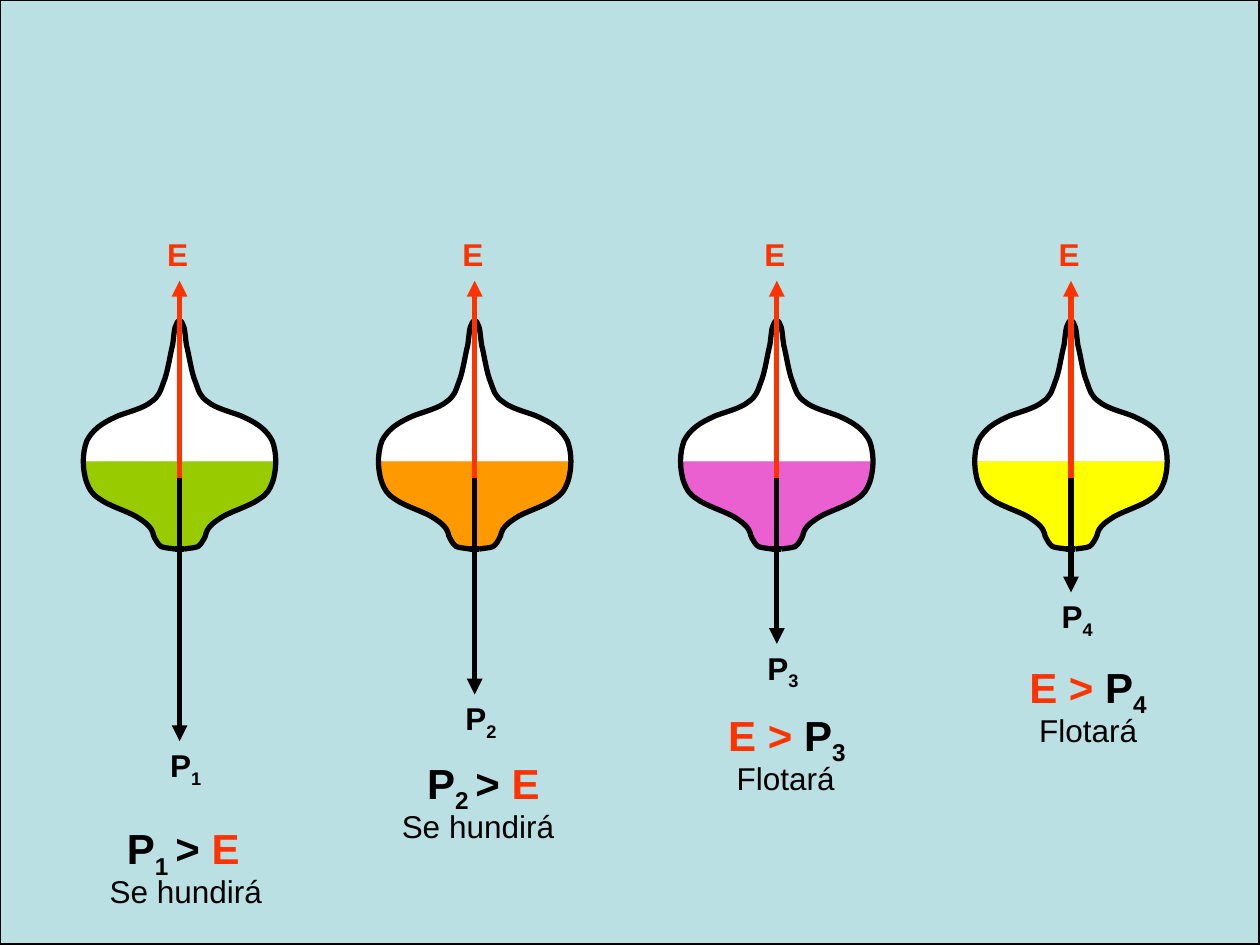
from dataclasses import dataclass

from lxml.etree import SubElement
from pptx import Presentation
from pptx.dml.color import RGBColor
from pptx.enum.shapes import MSO_CONNECTOR as Connector, MSO_SHAPE as Shape
from pptx.enum.text import MSO_AUTO_SIZE as AutoSize
from pptx.oxml.ns import qn
from pptx.util import Cm, Pt


@dataclass(frozen=True)
class Theme:
    font: str = "Arial"
    backdrop: RGBColor = RGBColor(0x5F, 0x5F, 0x5F)
    water: RGBColor = RGBColor(0xBB, 0xE0, 0xE3)
    air: RGBColor = RGBColor(0xFF, 0xFF, 0xFF)
    ink: RGBColor = RGBColor(0, 0, 0)
    thrust: RGBColor = RGBColor(0xFF, 0x33, 0)
    green: RGBColor = RGBColor(0x99, 0xCC, 0)
    orange: RGBColor = RGBColor(0xFF, 0x99, 0)
    pink: RGBColor = RGBColor(0xEA, 0x60, 0xD0)
    yellow: RGBColor = RGBColor(0xFF, 0xFF, 0)
    label_size: Pt = Pt(18)
    verdict_size: Pt = Pt(24)
    frame_line: Pt = Pt(1.75)
    thin_line: Pt = Pt(2.25)
    thick_line: Pt = Pt(3)


theme = Theme()


def add_text(shapes, left, top, width, height, runs, size, bold=True):
    """Add a text box; runs are (text, colour, is_subscript) tuples."""
    box = shapes.add_textbox(Cm(left), Cm(top), Cm(width), Cm(height))
    frame = box.text_frame
    frame.word_wrap = True
    frame.auto_size = AutoSize.SHAPE_TO_FIT_TEXT
    for text, colour, is_subscript in runs:
        run = frame.paragraphs[0].add_run()
        run.text = text
        run.font.name = theme.font
        run.font.size = size
        run.font.bold = bold
        run.font.color.rgb = colour
        if is_subscript:
            run.font._element.set("baseline", "-25000")


def add_freeform(shapes, points, fill=None):
    """Add a filled polygon, or an open black stroke when there is no fill."""
    corners = [(Cm(x), Cm(y)) for x, y in points]
    builder = shapes.build_freeform(*corners[0])
    builder.add_line_segments(corners[1:], close=fill is not None)
    shape = builder.convert_to_shape()
    shape.shadow.inherit = False
    if fill is None:
        shape.fill.background()
        shape.line.color.rgb = theme.ink
        shape.line.width = theme.thick_line
    else:
        shape.fill.solid()
        shape.fill.fore_color.rgb = fill
        shape.line.fill.background()
    return shape


presentation = Presentation()
presentation.slide_width = Cm(25.4)
presentation.slide_height = Cm(19.05)
slide = presentation.slides.add_slide(presentation.slide_layouts[6])
slide.background.fill.solid()
slide.background.fill.fore_color.rgb = theme.backdrop

water = slide.shapes.add_shape(
    Shape.RECTANGLE, 0, 0, presentation.slide_width, presentation.slide_height)
water.shadow.inherit = False
water.fill.solid()
water.fill.fore_color.rgb = theme.water
water.line.color.rgb = theme.ink
water.line.width = theme.frame_line

# Half of the diver, from tip to foot: Bézier curves in cm,
# as (distance from the axis, height on the slide).
TIP = (-0.06, 6.5)
CURVES = [
    ((-0.01, 6.48), (0.04, 6.45), (0.06, 6.53)),
    ((0.11, 6.6), (0.11, 6.76), (0.14, 6.96)),
    ((0.19, 7.14), (0.24, 7.52), (0.32, 7.7)),
    ((0.39, 7.9), (0.42, 8), (0.57, 8.1)),
    ((0.72, 8.23), (1.05, 8.31), (1.23, 8.38)),
    ((1.41, 8.46), (1.54, 8.53), (1.64, 8.61)),
    ((1.74, 8.69), (1.82, 8.79), (1.87, 8.89)),
    ((1.92, 9.02), (1.94, 9.17), (1.94, 9.3)),
    ((1.94, 9.42), (1.92, 9.6), (1.87, 9.73)),
    ((1.82, 9.86), (1.77, 9.96), (1.61, 10.06)),
    ((1.44, 10.19), (1.05, 10.31), (0.88, 10.41)),
    ((0.7, 10.52), (0.62, 10.59), (0.57, 10.67)),
    ((0.52, 10.72), (0.55, 10.77), (0.5, 10.85)),
    ((0.47, 10.9), (0.44, 10.97), (0.37, 11.02)),
    ((0.29, 11.05), (0.19, 11.05), (0.09, 11.07)),
]
NODES = [TIP] + [curve[-1] for curve in CURVES]
BELLY = 8  # index of the widest node, where the liquid starts
CENTRE = 9.63  # height at which both forces act

# axis, liquid, end of the weight arrow, verdict (left, top, width), word left, sinks
divers = [
    (3.62, theme.green, 14.94, (2.31, 16.46, 3.3), 1.96, True),
    (9.57, theme.orange, 14, (8.36, 15.14, 3.58), 7.85, True),
    (15.66, theme.pink, 12.98, (14.43, 14.17, 3.35), 14.6, False),
    (21.59, theme.yellow, 11.94, (20.5, 13.21, 3.51), 20.7, False),
]

for number, (axis, liquid, weight_end, verdict, word_left, sinks) in enumerate(divers, 1):
    shapes = slide.shapes.add_group_shape().shapes
    left_side = [(axis - x, y) for x, y in NODES]
    right_side = [(axis + x, y) for x, y in NODES]
    # The fills skip the tip node, where the two sides cross.
    add_freeform(shapes, left_side[1:BELLY + 1] + right_side[BELLY:0:-1], theme.air)
    add_freeform(shapes, left_side[BELLY:] + right_side[:BELLY - 1:-1], liquid)

    for side, nodes in ((-1, left_side), (1, right_side)):
        outline = add_freeform(shapes, nodes)
        segments = list(outline._element.iter(qn("a:lnTo")))
        for segment, curve in zip(segments, CURVES):
            bezier = SubElement(segment.getparent(), qn("a:cubicBezTo"))
            for x, y in curve:
                SubElement(bezier, qn("a:pt"),
                           x=str(Cm(axis + side * x) - outline.left),
                           y=str(Cm(y) - outline.top))
            segment.getparent().remove(segment)
    add_freeform(shapes, [right_side[-1], left_side[-1]])

    for arrow_end, colour, width in [
        (5.66, theme.thrust, theme.thick_line),
        (weight_end, theme.ink, theme.thick_line),
        (5.69, theme.thrust, theme.thin_line),
    ]:
        arrow = shapes.add_connector(
            Connector.STRAIGHT, Cm(axis), Cm(CENTRE), Cm(axis), Cm(arrow_end))
        arrow.line.color.rgb = colour
        arrow.line.width = width
        SubElement(arrow.line._get_or_add_ln(), qn("a:tailEnd"), type="triangle")
        SubElement(arrow._element.spPr, qn("a:effectLst"))

    weight = [("P", theme.ink, False), (str(number), theme.ink, True)]
    add_text(shapes, axis - 0.5, 4.62, 1.7, 1.02,
             [("E", theme.thrust, False)], theme.label_size)
    add_text(shapes, axis - 0.44, weight_end - 0.03, 1.7, 1.02, weight, theme.label_size)

    if sinks:
        word, word_width = "Se hundirá", 3.99
        comparison = [weight[0], (f"{number} ", theme.ink, True),
                      ("> ", theme.ink, False), ("E", theme.thrust, False)]
    else:
        word, word_width = "Flotará", 2.82
        comparison = [("E > ", theme.thrust, False), *weight]
    left, top, width = verdict
    captions = slide.shapes.add_group_shape().shapes
    add_text(captions, left, top, width, 1.27, comparison, theme.verdict_size)
    add_text(captions, word_left, top + 1, word_width, 1.02,
             [(word, theme.ink, False)], theme.label_size, bold=False)

presentation.save("out.pptx")
